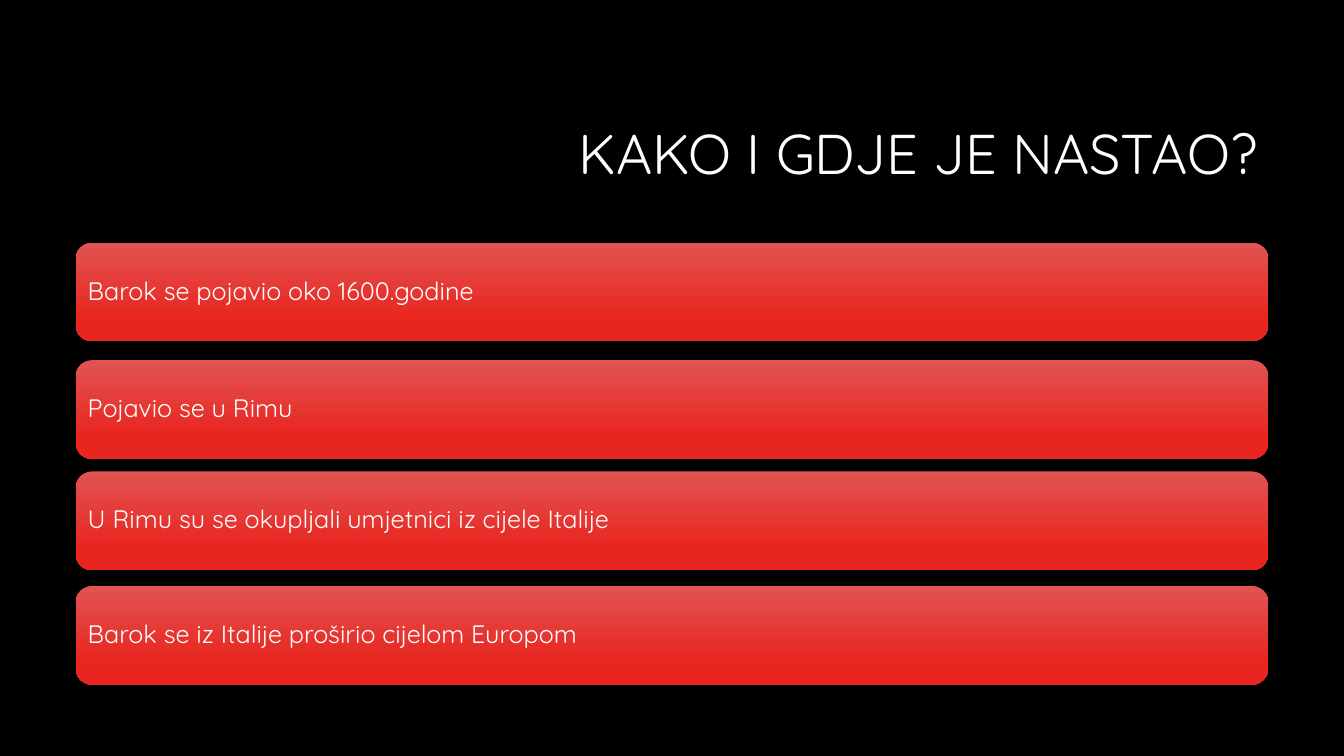
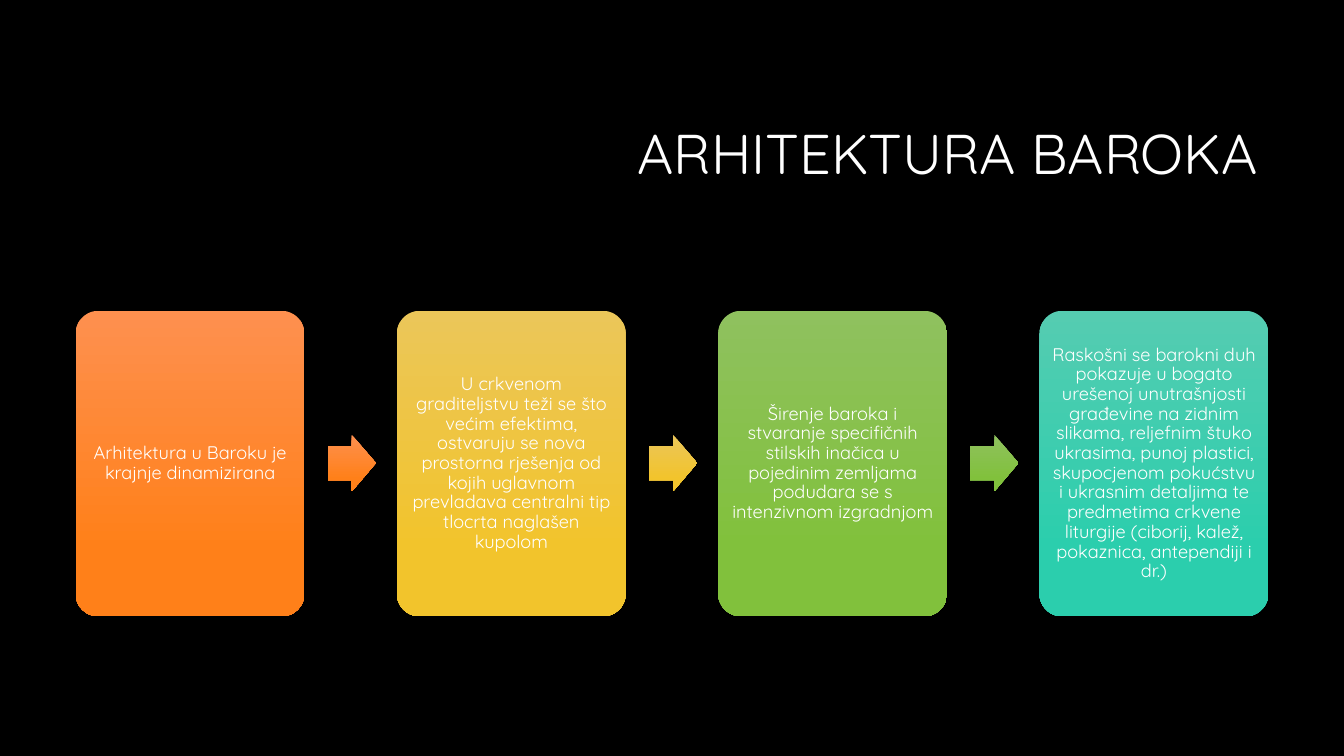
"""Build two slides on the Baroque: a list of bars and a row of linked cards."""
from dataclasses import dataclass

from pptx import Presentation
from pptx.dml.color import RGBColor
from pptx.enum.shapes import MSO_SHAPE
from pptx.enum.text import MSO_ANCHOR, PP_ALIGN
from pptx.shapes.autoshape import Shape
from pptx.slide import Slide
from pptx.util import Emu, Pt

BLACK = RGBColor(0x00, 0x00, 0x00)
WHITE = RGBColor(0xFF, 0xFF, 0xFF)
FONT = "Quicksand"
LEFT, WIDE = 72, 1136


@dataclass(frozen=True)
class Blend:
    top: RGBColor
    base: RGBColor


@dataclass(frozen=True)
class Bar:
    top: int
    text: str


@dataclass(frozen=True)
class Card:
    blend: Blend
    text: str


RED = Blend(RGBColor(0xE2, 0x54, 0x52), RGBColor(0xE8, 0x25, 0x1F))
ORANGE = Blend(RGBColor(0xFE, 0x90, 0x4F), RGBColor(0xFF, 0x80, 0x19))
YELLOW = Blend(RGBColor(0xEB, 0xC6, 0x59), RGBColor(0xF2, 0xC4, 0x2C))
GREEN = Blend(RGBColor(0x8F, 0xC1, 0x5E), RGBColor(0x81, 0xC1, 0x3C))
TEAL = Blend(RGBColor(0x55, 0xCC, 0xB1), RGBColor(0x2B, 0xCE, 0xAD))

BARS = [
    Bar(231, "Barok se pojavio oko 1600.godine"),
    Bar(343, "Pojavio se u Rimu"),
    Bar(449, "U Rimu su se okupljali umjetnici iz cijele Italije"),
    Bar(558, "Barok se iz Italije proširio cijelom Europom"),
]
CARDS = [
    Card(ORANGE, "Arhitektura u Baroku je krajnje dinamizirana"),
    Card(YELLOW, "U crkvenom graditeljstvu teži se što većim efektima, "
         "ostvaruju se nova prostorna rješenja od kojih uglavnom "
         "prevladava centralni tip tlocrta naglašen kupolom"),
    Card(GREEN, "Širenje baroka i stvaranje specifičnih stilskih inačica "
         "u pojedinim zemljama podudara se s intenzivnom izgradnjom"),
    Card(TEAL, "Raskošni se barokni duh pokazuje u bogato urešenoj "
         "unutrašnjosti građevine na zidnim slikama, reljefnim štuko "
         "ukrasima, punoj plastici, skupocjenom pokućstvu i ukrasnim "
         "detaljima te predmetima crkvene liturgije (ciborij, kalež, "
         "pokaznica, antependiji i dr.)"),
]


def px(count: int) -> Emu:
    return Emu(count * 9525)


def write(shape: Shape, text: str, *, size: int, align: PP_ALIGN,
          side: int, edge: int) -> None:
    frame = shape.text_frame
    frame.word_wrap = True
    frame.vertical_anchor = MSO_ANCHOR.MIDDLE
    frame.margin_left = frame.margin_right = px(side)
    frame.margin_top = frame.margin_bottom = px(edge)
    para = frame.paragraphs[0]
    para.alignment = align
    para.line_spacing = 0.9
    run = para.add_run()
    run.text = text
    run.font.name = FONT
    run.font.size = Pt(size)
    run.font.color.rgb = WHITE


def block(slide: Slide, kind: MSO_SHAPE, blend: Blend,
          left: int, top: int, width: int, height: int) -> Shape:
    shape = slide.shapes.add_shape(kind, px(left), px(top), px(width), px(height))
    shape.shadow.inherit = False
    shape.line.fill.background()
    shape.fill.gradient()
    shape.fill.gradient_angle = 270
    first, last = shape.fill.gradient_stops
    first.position, first.color.rgb = 0, blend.top
    last.position, last.color.rgb = 0.78, blend.base
    return shape


def start(deck: Presentation, title: str) -> Slide:
    slide = deck.slides.add_slide(deck.slide_layouts[6])
    slide.background.fill.solid()
    slide.background.fill.fore_color.rgb = BLACK
    box = slide.shapes.add_textbox(px(304), px(81), px(904), px(135))
    write(box, title, size=40, align=PP_ALIGN.RIGHT, side=10, edge=5)
    return slide


def list_bars(slide: Slide) -> None:
    for bar in BARS:
        shape = block(slide, MSO_SHAPE.ROUNDED_RECTANGLE, RED,
                      LEFT, bar.top, WIDE, 94)
        write(shape, bar.text, size=18, align=PP_ALIGN.LEFT, side=7, edge=7)


def link_cards(slide: Slide) -> None:
    top, width, height = 296, 218, 291
    span, tall = 46, 54
    last = len(CARDS) - 1
    step = (WIDE - width) // last
    for spot, card in enumerate(CARDS):
        left = LEFT + spot * step
        shape = block(slide, MSO_SHAPE.ROUNDED_RECTANGLE, card.blend,
                      left, top, width, height)
        shape.adjustments[0] = 0.1
        write(shape, card.text, size=13, align=PP_ALIGN.CENTER, side=5, edge=5)
        if spot < last:
            arrow = block(slide, MSO_SHAPE.RIGHT_ARROW, card.blend,
                          left + width + 22, top + (height - tall) // 2,
                          span, tall)
            arrow.adjustments[0] = 0.6
            arrow.adjustments[1] = 0.5


def main() -> None:
    deck = Presentation()
    deck.slide_width, deck.slide_height = px(1280), px(720)
    list_bars(start(deck, "KAKO I GDJE JE NASTAO?"))
    link_cards(start(deck, "ARHITEKTURA BAROKA"))
    deck.save("out.pptx")


if __name__ == "__main__":
    main()
